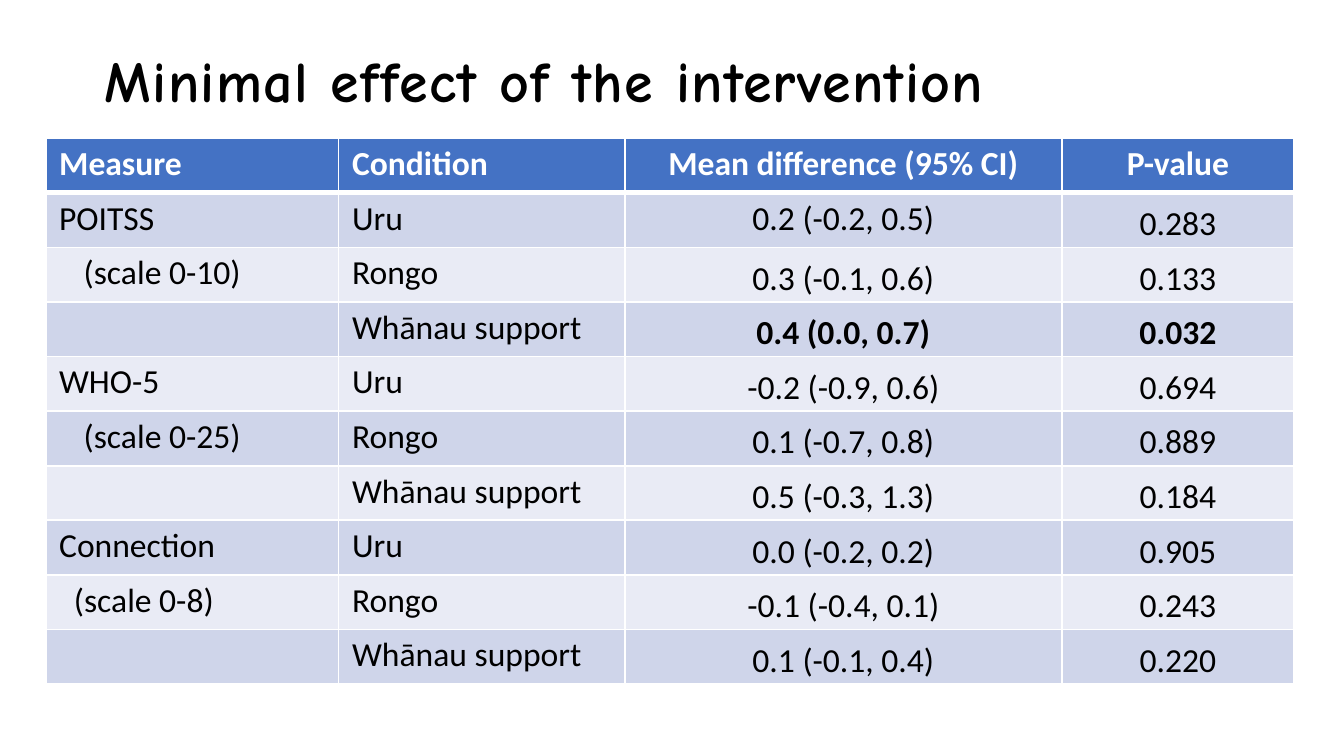
import dataclasses

import pptx
import pptx.dml.color
import pptx.enum.text
import pptx.oxml
import pptx.oxml.ns
import pptx.slide
import pptx.table
import pptx.text.text
import pptx.util

Inches = pptx.util.Inches
Pt = pptx.util.Pt
RGBColor = pptx.dml.color.RGBColor
Align = pptx.enum.text.PP_ALIGN

BLACK = RGBColor(0x00, 0x00, 0x00)
WHITE = RGBColor(0xFF, 0xFF, 0xFF)
BLUE = RGBColor(0x44, 0x72, 0xC4)
DARK = RGBColor(0xCF, 0xD5, 0xEA)
PALE = RGBColor(0xE9, 0xEB, 0xF5)

WIDTHS = (2.18, 2.13, 3.25, 1.73)
HEIGHT = 4.06
HEADS = ("Measure", "Condition", "Mean difference (95% CI)", "P-value")
GROUPS = ("Uru", "Rongo", "Whānau support")


@dataclasses.dataclass
class Result:
    mean: str
    prob: str
    bold: bool = False


@dataclasses.dataclass
class Measure:
    name: str
    scale: str
    results: tuple[Result, ...]


@dataclasses.dataclass
class Style:
    fill: RGBColor
    color: RGBColor = BLACK
    bold: bool = False
    align: Align = Align.LEFT
    left: float = 0.1
    right: float = 0
    top: float = 0.04
    before: float = 2.6


MEASURES = (
    Measure("POITSS", "(scale 0-10)", (
        Result("0.2 (-0.2, 0.5)", "0.283"),
        Result("0.3 (-0.1, 0.6)", "0.133"),
        Result("0.4 (0.0, 0.7)", "0.032", bold=True))),
    Measure("WHO-5", "(scale 0-25)", (
        Result("-0.2 (-0.9, 0.6)", "0.694"),
        Result("0.1 (-0.7, 0.8)", "0.889"),
        Result("0.5 (-0.3, 1.3)", "0.184"))),
    Measure("Connection", "(scale 0-8)", (
        Result("0.0 (-0.2, 0.2)", "0.905"),
        Result("-0.1 (-0.4, 0.1)", "0.243"),
        Result("0.1 (-0.1, 0.4)", "0.220"))),
)


def add_run(para: pptx.text.text._Paragraph, text: str, font: str,
            size: float, color: RGBColor, bold: bool) -> pptx.text.text._Run:
    run = para.add_run()
    run.text = text
    run.font.name = font
    run.font.size = Pt(size)
    run.font.color.rgb = color
    run.font.bold = bold
    return run


def add_edges(cell: pptx.table._Cell, row: int) -> None:
    """Draw white borders, with a thick rule below the header."""
    props = cell._tc.get_or_add_tcPr()
    for side in "LRTB":
        thick = (row, side) in ((0, "B"), (1, "T"))
        props.append(pptx.oxml.parse_xml(
            f'<a:ln{side} {pptx.oxml.ns.nsdecls("a")} w="{Pt(3 if thick else 1)}">'
            f'<a:solidFill><a:srgbClr val="{WHITE}"/></a:solidFill></a:ln{side}>'))


def fill_cell(cell: pptx.table._Cell, row: int, text: str, style: Style) -> None:
    add_edges(cell, row)
    cell.fill.solid()
    cell.fill.fore_color.rgb = style.fill
    cell.margin_left = Inches(style.left)
    cell.margin_right = Inches(style.right)
    cell.margin_top = Inches(style.top)
    cell.margin_bottom = 0
    if text:
        para = cell.text_frame.paragraphs[0]
        para.alignment = style.align
        para.space_before = Pt(style.before)
        add_run(para, text, "Calibri", 18, style.color, style.bold)


def fill_head(table: pptx.table.Table) -> None:
    for col, text in enumerate(HEADS):
        style = Style(BLUE, WHITE, True)
        if col > 1:
            style.align, style.left = Align.CENTER, 0
        fill_cell(table.cell(0, col), 0, text, style)


def fill_row(table: pptx.table.Table, row: int, label: str, group: str,
             result: Result) -> None:
    fill = DARK if row % 2 else PALE
    name = Style(fill)
    if label.endswith("-8)"):
        name.left = 0.21
    elif label.startswith("("):
        name.align, name.right = Align.RIGHT, 0.73
    value = Style(fill, bold=result.bold, align=Align.CENTER, left=0,
                  top=0.08, before=6)
    mean = value
    if row == 1:
        mean = dataclasses.replace(value, top=0.04, before=2.6)
    fill_cell(table.cell(row, 0), row, label, name)
    fill_cell(table.cell(row, 1), row, group, Style(fill))
    fill_cell(table.cell(row, 2), row, result.mean, mean)
    fill_cell(table.cell(row, 3), row, result.prob, value)


def add_title(slide: pptx.slide.Slide) -> None:
    title = slide.shapes.title
    title.left, title.top = Inches(0.77), Inches(0.31)
    title.width, title.height = Inches(7.45), Inches(0.55)
    frame = title.text_frame
    frame.margin_left = Inches(0.01)
    frame.margin_right = frame.margin_bottom = 0
    frame.margin_top = Inches(0.02)
    frame.vertical_anchor = pptx.enum.text.MSO_ANCHOR.TOP
    frame.auto_size = pptx.enum.text.MSO_AUTO_SIZE.SHAPE_TO_FIT_TEXT
    para = frame.paragraphs[0]
    para.alignment = Align.LEFT
    para.space_before = Pt(1.4)
    run = add_run(para, "Minimal effect of the intervention",
                  "Comic Neue", 31, BLACK, True)
    run.font._element.set("spc", "75")


def add_table(slide: pptx.slide.Slide) -> None:
    count = 1 + len(MEASURES) * len(GROUPS)
    table = slide.shapes.add_table(
        count, len(WIDTHS), Inches(0.34), Inches(1.03),
        Inches(sum(WIDTHS)), Inches(HEIGHT)).table
    for col, width in zip(table.columns, WIDTHS):
        col.width = Inches(width)
    for line in table.rows:
        line.height = Inches(HEIGHT / count)
    fill_head(table)
    row = 1
    for item in MEASURES:
        labels = (item.name, item.scale, "")
        for label, group, result in zip(labels, GROUPS, item.results):
            fill_row(table, row, label, group, result)
            row += 1


def main() -> None:
    deck = pptx.Presentation()
    deck.slide_width = Inches(10)
    deck.slide_height = deck.slide_width * 9 // 16
    slide = deck.slides.add_slide(deck.slide_layouts.get_by_name("Title Only"))
    add_title(slide)
    add_table(slide)
    deck.save("out.pptx")


if __name__ == "__main__":
    main()
